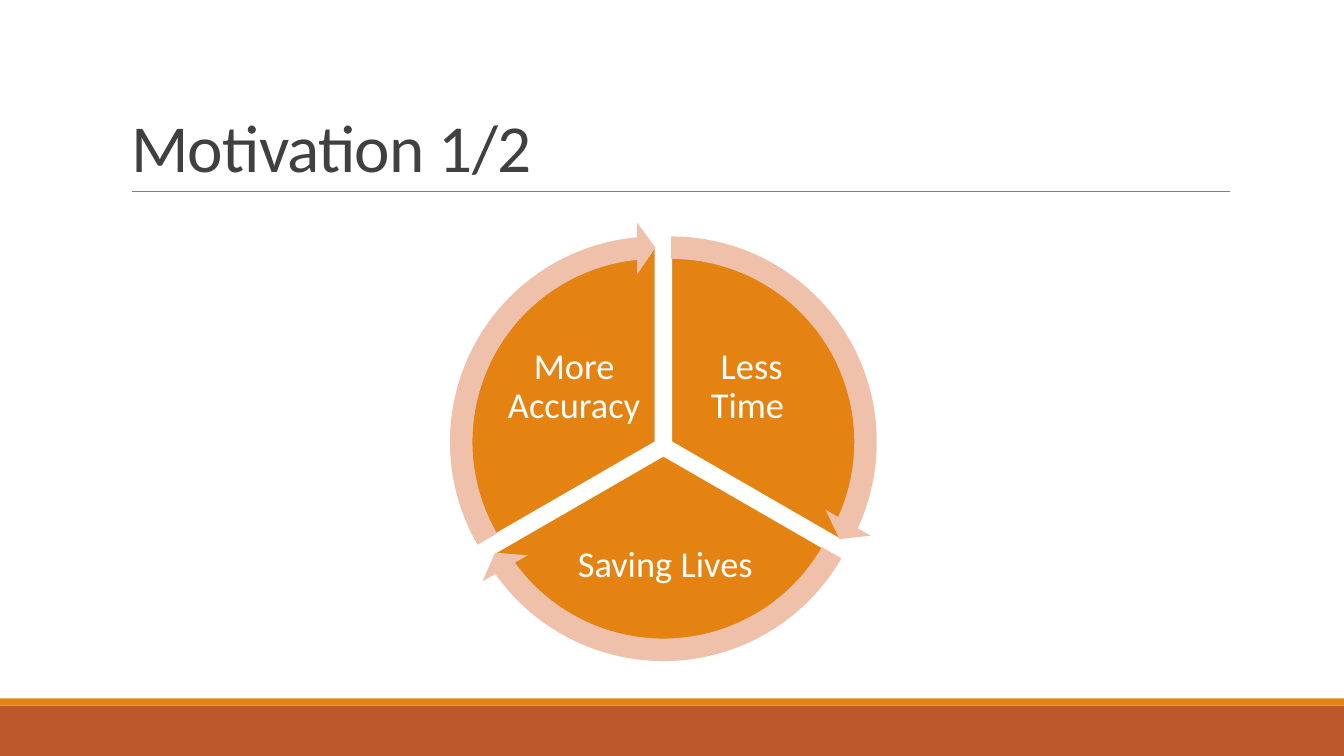
from dataclasses import dataclass
from math import cos, radians, sin

from lxml.etree import SubElement
from pptx import Presentation
from pptx.dml.color import RGBColor
from pptx.enum.shapes import MSO_CONNECTOR, MSO_SHAPE
from pptx.enum.text import MSO_ANCHOR, MSO_AUTO_SIZE, PP_ALIGN
from pptx.oxml.ns import qn
from pptx.shapes.autoshape import Shape
from pptx.slide import Slide
from pptx.text.text import TextFrame
from pptx.util import Inches, Pt


@dataclass(frozen=True)
class Theme:
    font: str = "Calibri"
    title_size: float = 48
    label_size: float = 26
    title: RGBColor = RGBColor(0x40, 0x40, 0x40)
    rule: RGBColor = RGBColor(0x80, 0x80, 0x80)
    white: RGBColor = RGBColor(0xFF, 0xFF, 0xFF)
    orange: RGBColor = RGBColor(0xE4, 0x83, 0x12)
    rust: RGBColor = RGBColor(0xBD, 0x58, 0x2C)
    peach: RGBColor = RGBColor(0xEF, 0xC1, 0xAB)


@dataclass(frozen=True)
class Box:
    left: float
    top: float
    width: float
    height: float

    def lengths(self) -> tuple[Inches, ...]:
        return tuple(Inches(v) for v in (self.left, self.top, self.width, self.height))


@dataclass(frozen=True)
class Sector:
    text: str
    start: float  # degrees, clockwise from three o'clock
    label: Box


THEME = Theme()
SWEEP = 120
CENTER = (6.58, 4.43)
GAP = 0.09  # distance each sector is pushed out from the centre
PIE_SIZE = 3.89
ARROW_SIZE = 4.37
HEAD_ANGLE = 5.46
ARROW_THICKNESS = 0.051
ARROW_HEAD = 0.059
LABEL_INSET = 0.03

SECTORS = [
    Sector("Less Time ", 270, Box(6.76, 3.26, 1.39, 1.16)),
    Sector("Saving Lives", 30, Box(5.56, 5.1, 2.08, 1.02)),
    Sector("More Accuracy", 150, Box(5, 3.26, 1.39, 1.16)),
]
BANDS = [
    (Box(0, 7, 13.33, 0.5), THEME.rust),
    (Box(0, 6.93, 13.33, 0.07), THEME.orange),
]


def angle(degrees: float) -> float:
    """Convert degrees to the adjustment unit of angular handles."""
    return degrees % 360 * 0.6


def sector_box(sector: Sector, size: float) -> Box:
    """Square around the sector's own centre, pushed out along its bisector."""
    bisector = radians(sector.start + SWEEP / 2)
    x = CENTER[0] + GAP * cos(bisector)
    y = CENTER[1] + GAP * sin(bisector)
    return Box(x - size / 2, y - size / 2, size, size)


def add_filled(s: Slide, kind: MSO_SHAPE, box: Box, color: RGBColor,
               adjustments: tuple[float, ...] = ()) -> Shape:
    sp = s.shapes.add_shape(kind, *box.lengths())
    sp.shadow.inherit = False
    sp.fill.solid()
    sp.fill.fore_color.rgb = color
    sp.line.fill.background()
    for i, value in enumerate(adjustments):
        sp.adjustments[i] = value
    return sp


def set_text(tf: TextFrame, text: str, size: float, color: RGBColor,
             align: PP_ALIGN, spacing: float) -> None:
    tf.text = text
    tf.word_wrap = True
    tf.auto_size = MSO_AUTO_SIZE.NONE
    p = tf.paragraphs[0]
    p.alignment = align
    p.line_spacing = spacing
    font = p.runs[0].font
    font.name = THEME.font
    font.size = Pt(size)
    font.color.rgb = color


def add_title(s: Slide) -> None:
    sp = s.shapes.title
    sp.left, sp.top, sp.width, sp.height = Box(1.2, 0.31, 11, 1.59).lengths()
    tf = sp.text_frame
    set_text(tf, "Motivation 1/2", THEME.title_size, THEME.title, PP_ALIGN.LEFT, 0.85)
    tf.vertical_anchor = MSO_ANCHOR.BOTTOM
    tf.paragraphs[0].runs[0].font._element.set("spc", "-50")


def add_title_rule(s: Slide) -> None:
    line = s.shapes.add_connector(MSO_CONNECTOR.STRAIGHT, Inches(1.31), Inches(1.9),
                                  Inches(12.2), Inches(1.9))
    line.line.color.rgb = THEME.rule
    line.line.width = Pt(0.5)
    SubElement(line._element.spPr, qn("a:effectLst"))


def add_sector(s: Slide, sector: Sector) -> None:
    pie = add_filled(s, MSO_SHAPE.PIE, sector_box(sector, PIE_SIZE), THEME.orange,
                     (angle(sector.start), angle(sector.start + SWEEP)))
    pie.line.color.rgb = THEME.white
    pie.line.width = Pt(1.25)
    tf = s.shapes.add_textbox(*sector.label.lengths()).text_frame
    set_text(tf, sector.text, THEME.label_size, THEME.white, PP_ALIGN.CENTER, 0.9)
    tf.vertical_anchor = MSO_ANCHOR.MIDDLE
    tf.margin_left = tf.margin_right = Inches(LABEL_INSET)
    tf.margin_top = tf.margin_bottom = Inches(LABEL_INSET)


def add_arrow(s: Slide, sector: Sector) -> None:
    add_filled(s, MSO_SHAPE.CIRCULAR_ARROW, sector_box(sector, ARROW_SIZE), THEME.peach,
               (ARROW_THICKNESS, angle(HEAD_ANGLE),
                angle(sector.start + SWEEP - HEAD_ANGLE), angle(sector.start), ARROW_HEAD))


def main() -> None:
    prs = Presentation()
    prs.slide_width, prs.slide_height = Inches(13.33), Inches(7.5)
    s = prs.slides.add_slide(prs.slide_layouts.get_by_name("Title Only"))
    for box, color in BANDS:
        add_filled(s, MSO_SHAPE.RECTANGLE, box, color)
    add_title_rule(s)
    add_title(s)
    for sector in SECTORS:
        add_sector(s, sector)
    for sector in SECTORS:
        add_arrow(s, sector)
    prs.save("out.pptx")


if __name__ == "__main__":
    main()
